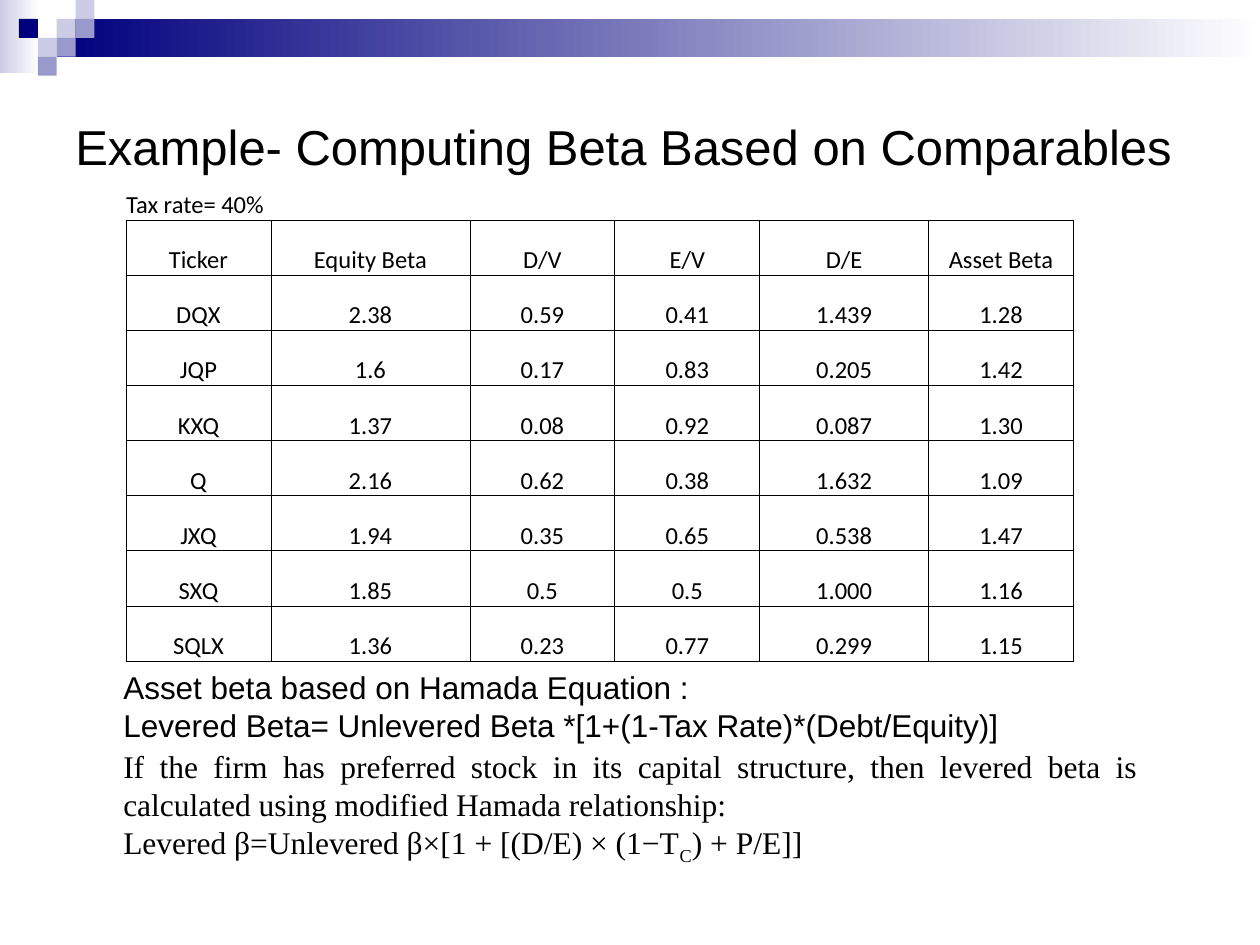
from lxml import etree
from pptx import Presentation
from pptx import util as u
from pptx.dml.color import RGBColor
from pptx.enum import shapes, text
from pptx.oxml import ns

THEME = {
    "navy": "00007D", "mid": "9999CC", "pale": "CCCCE6", "white": "FFFFFF", "black": "000000",
    "title": ("Arial", 28), "table": ("Calibri", 14),
    "formula": ("Arial", 18), "note": ("Times New Roman", 18),
}

BANDS = [((0, 0, 0.31, 0.58), "pale"), ((0.45, 0.15, 9.55, 0.3), "navy")]
SQUARE = 0.15
SQUARES = [
    (3, 1, "pale"), (4, 0, "pale"), (4, 1, "mid"), (2, 2, "pale"),
    (1, 1, "navy"), (3, 2, "mid"), (2, 3, "mid"),
]

TITLE = "Example- Computing Beta Based on Comparables"
CAPTION = "Tax rate= 40%"
BETAS = [
    ("Ticker", "Equity Beta", "D/V", "E/V", "D/E", "Asset Beta"),
    ("DQX", "2.38", "0.59", "0.41", "1.439", "1.28"),
    ("JQP", "1.6", "0.17", "0.83", "0.205", "1.42"),
    ("KXQ", "1.37", "0.08", "0.92", "0.087", "1.30"),
    ("Q", "2.16", "0.62", "0.38", "1.632", "1.09"),
    ("JXQ", "1.94", "0.35", "0.65", "0.538", "1.47"),
    ("SXQ", "1.85", "0.5", "0.5", "1.000", "1.16"),
    ("SQLX", "1.36", "0.23", "0.77", "0.299", "1.15"),
]
COLUMNS = [1.15, 1.58, 1.15, 1.15, 1.34, 1.15]
TABLE_LEFT, TABLE_TOP, TABLE_HEIGHT = 1, 1.31, 3.94

FORMULA = [
    [("Asset beta based on Hamada Equation :", 0)],
    [("Levered Beta= Unlevered Beta *[1+(1-Tax Rate)*(Debt/Equity)]", 0)],
]
NOTE = [
    [("If the firm has preferred stock in its capital structure, then levered beta is "
      "calculated using modified Hamada relationship: ", 0)],
    [("Levered β=Unlevered β×[1 + [(D/E) × (1−T", 0), ("C", -25), (") + P/E]]", 0)],
]


def color(name):
    return RGBColor.from_string(THEME[name])


def inches(values):
    return [u.Inches(value) for value in values]


def add_block(page, place, name):
    block = page.shapes.add_shape(shapes.MSO_SHAPE.RECTANGLE, *inches(place))
    block.shadow.inherit = False
    block.line.fill.background()
    block.fill.solid()
    block.fill.fore_color.rgb = color(name)
    return block


def add_band(page, place, name):
    fill = add_block(page, place, name).fill
    fill.gradient()
    fill.gradient_angle = 0
    for stop, shade, position in zip(fill.gradient_stops, (name, "white"), (0, 1)):
        stop.color.rgb = color(shade)
        stop.position = position


def add_span(para, words, style, baseline=0):
    span = para.add_run()
    span.text = words
    span.font.name, size = THEME[style]
    span.font.size = u.Pt(size)
    span.font.color.rgb = color("black")
    if baseline:
        span._r.get_or_add_rPr().set("baseline", str(baseline * 1000))


def add_text(page, place, lines, style, align=text.PP_ALIGN.LEFT, anchor=text.MSO_ANCHOR.TOP):
    frame = page.shapes.add_textbox(*inches(place)).text_frame
    frame.word_wrap = True
    frame.vertical_anchor = anchor
    for index, line in enumerate(lines):
        para = frame.paragraphs[0] if index == 0 else frame.add_paragraph()
        para.alignment = align
        for words, baseline in line:
            add_span(para, words, style, baseline)


def set_borders(cell, visible):
    properties = cell._tc.get_or_add_tcPr()
    for side in "LRTB":
        line = etree.SubElement(properties, ns.qn(f"a:ln{side}"), w=str(u.Pt(0.5)))
        if side in visible:
            fill = etree.SubElement(line, ns.qn("a:solidFill"))
            etree.SubElement(fill, ns.qn("a:srgbClr"), val=THEME["black"])
        else:
            etree.SubElement(line, ns.qn("a:noFill"))


def add_table(page):
    rows = [(CAPTION,) + ("",) * (len(COLUMNS) - 1)] + BETAS
    place = (TABLE_LEFT, TABLE_TOP, sum(COLUMNS), TABLE_HEIGHT)
    table = page.shapes.add_table(len(rows), len(COLUMNS), *inches(place)).table
    table.first_row = table.horz_banding = False
    for column, width in zip(table.columns, COLUMNS):
        column.width = u.Inches(width)
    for row_index, row in enumerate(rows):
        table.rows[row_index].height = u.Inches(TABLE_HEIGHT / len(rows))
        for column_index, words in enumerate(row):
            cell = table.cell(row_index, column_index)
            set_borders(cell, "LRTB" if row_index else "B")
            cell.fill.background()
            cell.margin_left = cell.margin_right = cell.margin_top = cell.margin_bottom = 0
            cell.vertical_anchor = text.MSO_ANCHOR.BOTTOM
            para = cell.text_frame.paragraphs[0]
            para.alignment = text.PP_ALIGN.CENTER if row_index else text.PP_ALIGN.LEFT
            if words:
                add_span(para, words, "table")
    table.cell(0, 0).merge(table.cell(0, 1))


def main():
    deck = Presentation()
    deck.slide_width, deck.slide_height = inches((10, 7.5))
    page = deck.slides.add_slide(deck.slide_layouts[6])
    for place, name in BANDS:
        add_band(page, place, name)
    for column, row, name in SQUARES:
        add_block(page, (column * SQUARE, row * SQUARE, SQUARE, SQUARE), name)
    add_text(page, (0.5, 0.67, 9.5, 0.98), [[(TITLE, 0)]], "title", anchor=text.MSO_ANCHOR.MIDDLE)
    add_table(page)
    add_text(page, (0.88, 5.25, 8.25, 0.71), FORMULA, "formula")
    add_text(page, (0.88, 5.88, 8.25, 1.01), NOTE, "note", align=text.PP_ALIGN.JUSTIFY)
    deck.save("out.pptx")


if __name__ == "__main__":
    main()
